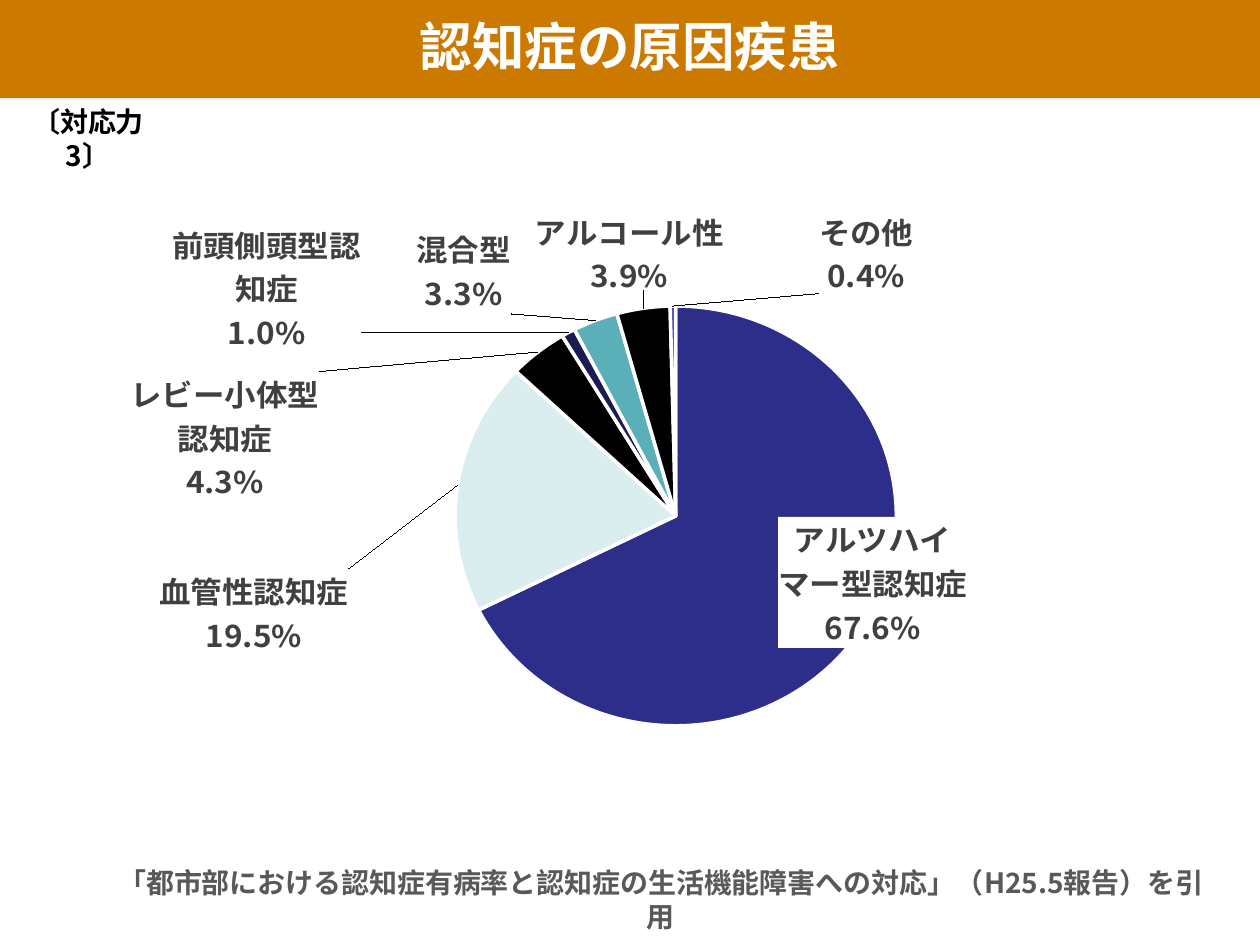
from copy import deepcopy
from pptx import Presentation
from pptx.chart.data import CategoryChartData
from pptx.dml.color import RGBColor
from pptx.enum.chart import XL_CHART_TYPE, XL_LABEL_POSITION
from pptx.enum.shapes import MSO_SHAPE
from pptx.enum.text import PP_ALIGN
from pptx.oxml import parse_xml
from pptx.oxml.ns import nsdecls, qn
from pptx.util import Inches, Pt

PIE = XL_CHART_TYPE.PIE
OUTSIDE = XL_LABEL_POSITION.OUTSIDE_END
RECT = MSO_SHAPE.RECTANGLE
CENTER = PP_ALIGN.CENTER

WIDTH, HEIGHT = 10, 7.5
FACE = "Noto Sans CJK JP"
ORANGE, WHITE, BLACK = "CC7900", "FFFFFF", "000000"
DARK, GRAY = "404040", "595959"

TITLE = "認知症の原因疾患"
MARK = "〔対応力3〕"
SOURCE = "「都市部における認知症有病率と認知症の生活機能障害への対応」（H25.5報告）を引用"

# Cause, share, slice colour, label shift as shares of the chart
CAUSES = [
    ("アルツハイマー型認知症", 0.676, "2D2D8A", (-0.09, -0.21)),
    ("血管性認知症", 0.195, "DAEDEF", (-0.1, 0.32)),
    ("レビー小体型認知症", 0.043, BLACK, (-0.21, 0.29)),
    ("前頭側頭型認知症", 0.01, "1B1B53", (-0.2, 0.05)),
    ("混合型", 0.033, "5AAFB8", (-0.08, 0)),
    ("アルコール性", 0.039, BLACK, (0.08, -0.02)),
    ("その他", 0.004, "3D3DBB", (0.19, -0.01)),
]
NAMES, SHARES, FILLS, SHIFTS = zip(*CAUSES)


def color(code):
    return RGBColor.from_string(code)


def style(font, size, code):
    font.name, font.size, font.bold = FACE, Pt(size), True
    font.color.rgb = color(code)


def add_asian(root):
    """Use each Latin face for East Asian text as well."""
    for latin in list(root.iter(qn("a:latin"))):
        face = latin.get("typeface")
        latin.addnext(parse_xml(f'<a:ea {nsdecls("a")} typeface="{face}"/>'))


def add_text(slide, box, text, size, code):
    frame = slide.shapes.add_textbox(*map(Inches, box)).text_frame
    frame.word_wrap = True
    frame.text = text
    line = frame.paragraphs[0]
    line.alignment = CENTER
    style(line.runs[0].font, size, code)


def add_header(slide, box):
    left, top, width, height = box
    # Band
    band = slide.shapes.add_shape(RECT, *map(Inches, box))
    band.shadow.inherit = False
    band.fill.solid()
    band.fill.fore_color.rgb = color(ORANGE)
    band.line.fill.background()
    # Title on the band, course mark below it
    inner = (left + width / 6, top + height * 0.08, width * 2 / 3, height * 0.78)
    add_text(slide, inner, TITLE, 30, WHITE)
    below = (left, top + height, width * 0.14, height / 2)
    add_text(slide, below, MARK, 16, BLACK)


def make_layout(**values):
    """Manual chart layout, with one element for each named value."""
    body = "".join(f'<c:{tag} val="{val}"/>' for tag, val in values.items())
    return parse_xml(f'<c:layout {nsdecls("c")}><c:manualLayout>{body}'
                     '</c:manualLayout></c:layout>')


def place_plot(chart):
    """Fix the inner plot area as shares of the chart."""
    area = next(chart.element.iter(qn("c:plotArea")))
    for old in area.findall(qn("c:layout")):
        area.remove(old)
    area.insert(0, make_layout(layoutTarget="inner", xMode="edge", yMode="edge",
                               x=0.14, y=0.18, w=0.81, h=0.78))


def paint_slices(series):
    for index, code in enumerate(FILLS):
        slice_ = series.points[index].format
        slice_.fill.solid()
        slice_.fill.fore_color.rgb = color(code)
        slice_.line.color.rgb = color(WHITE)
        slice_.line.width = Pt(2)


def set_labels(series):
    """Set what all labels share: name, value and type."""
    labels = series.data_labels
    labels.show_value = labels.show_category_name = True
    labels.show_percentage = False
    labels.number_format = "0.0%"
    labels.number_format_is_linked = False
    labels.position = OUTSIDE
    style(labels.font, 18, DARK)


def shift_labels(chart):
    """Give each slice a shifted copy of the shared label."""
    group = next(chart.element.iter(qn("c:dLbls")))
    group.find(qn("c:showBubbleSize")).addnext(
        parse_xml(f'<c:separator {nsdecls("c")}>\n</c:separator>'))
    shared = [node for node in group if node.tag != qn("c:showLeaderLines")]
    for index, (x, y) in enumerate(SHIFTS):
        label = parse_xml(f'<c:dLbl {nsdecls("c")}><c:idx val="{index}"/></c:dLbl>')
        label.append(make_layout(x=x, y=y))
        label.extend(deepcopy(shared))
        group.insert(index, label)
    # White backing where the first label overlaps its slice
    group[0].find(qn("c:numFmt")).addnext(parse_xml(
        f'<c:spPr {nsdecls("c", "a")}><a:solidFill>'
        f'<a:srgbClr val="{WHITE}"/></a:solidFill></c:spPr>'))


def add_pie(slide, box):
    data = CategoryChartData(number_format="0.0%")
    data.categories = NAMES
    data.add_series("Series 1", SHARES)
    chart = slide.shapes.add_chart(PIE, *map(Inches, box), data).chart
    chart.has_title = chart.has_legend = False
    chart.font.name, chart.font.size = "Arial", Pt(10)
    chart.font.color.rgb = color(BLACK)
    plot = chart.plots[0]
    plot.vary_by_categories = True
    series = plot.series[0]
    paint_slices(series)
    set_labels(series)
    shift_labels(chart)
    place_plot(chart)
    add_asian(chart.element)


def main():
    deck = Presentation()
    deck.slide_width, deck.slide_height = Inches(WIDTH), Inches(HEIGHT)
    slide = deck.slides.add_slide(deck.slide_layouts[6])
    add_header(slide, (0, 0, WIDTH, 0.78))
    add_pie(slide, (0.96, 1.55, 8.08, 4.49))
    # Source note
    add_text(slide, (0.8, 6.82, 8.89, 0.37), SOURCE, 16, GRAY)
    add_asian(slide.element)
    deck.save("out.pptx")


if __name__ == "__main__":
    main()
